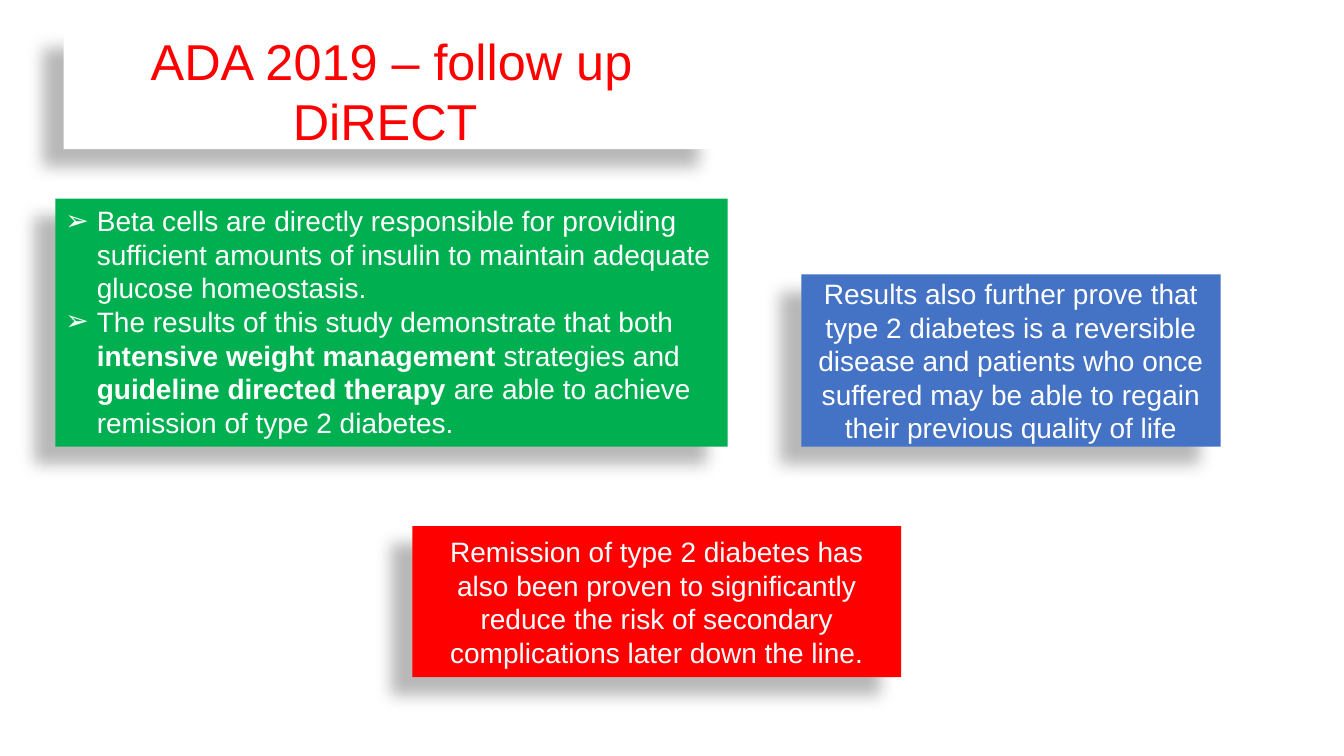
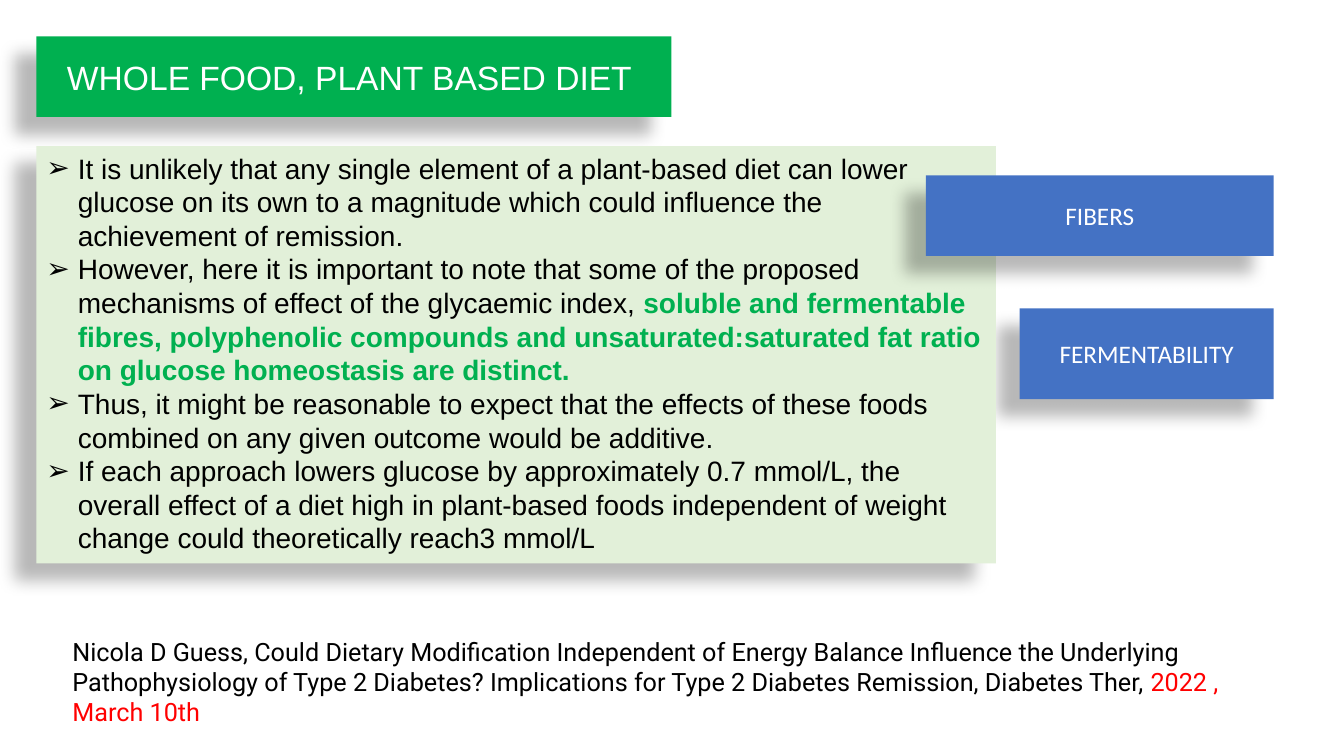
from dataclasses import dataclass

from lxml import etree
from pptx import Presentation
from pptx import util as u
from pptx.dml.color import RGBColor
from pptx.enum import shapes, text
from pptx.oxml.ns import qn


@dataclass(frozen=True)
class Theme:
    """Colours, fonts, type sizes and shadow shared by the slides."""
    white: str = "FFFFFF"
    black: str = "000000"
    red: str = "FF0000"
    green: str = "00B050"
    pale: str = "E2F0D9"
    blue: str = "4472C4"
    body_font: str = "Arial"
    tag_font: str = "Calibri"
    cite_font: str = "Roboto"
    title: int = 36
    heading: int = 24
    body: int = 20
    small: int = 18
    indent: float = 22.5
    shadow_blur: float = 11.8
    shadow_dist: float = 19.7
    shadow_angle: int = 141
    shadow_alpha: int = 28


T = Theme()


def points(box):
    """Turn the numbers of a box into lengths."""
    return [u.Pt(v) for v in box]


def sub(parent, tag, **attrs):
    """Add an XML child with the given attributes."""
    el = etree.SubElement(parent, qn(tag))
    for name, value in attrs.items():
        el.set(name, str(value))
    return el


def cast_shadow(sp):
    """Give a shape the soft shadow down and to the left."""
    sp.shadow.inherit = False
    effects = sp._element.spPr.find(qn("a:effectLst"))
    outer = sub(effects, "a:outerShdw", blurRad=int(u.Pt(T.shadow_blur)),
                dist=int(u.Pt(T.shadow_dist)), dir=T.shadow_angle * 60000,
                rotWithShape=0)
    clr = sub(outer, "a:srgbClr", val=T.black)
    sub(clr, "a:alpha", val=T.shadow_alpha * 1000)


def set_bullet(p):
    """Give a paragraph a hanging arrow bullet."""
    pPr = p._p.get_or_add_pPr()
    indent = int(u.Pt(T.indent))
    pPr.set("marL", str(indent))
    pPr.set("indent", str(-indent))
    sub(pPr, "a:buFont", typeface=T.body_font)
    sub(pPr, "a:buChar", char="➢")


def write(sp, paras, size, color, font=T.body_font, bullets=False, centre=True):
    """Fill a shape with paragraphs, each a list of (text, overrides) runs."""
    tf = sp.text_frame
    fit = text.MSO_AUTO_SIZE.NONE if centre else text.MSO_AUTO_SIZE.SHAPE_TO_FIT_TEXT
    anchor = text.MSO_ANCHOR.MIDDLE if centre else text.MSO_ANCHOR.TOP
    for name, value in dict(word_wrap=True, auto_size=fit, vertical_anchor=anchor).items():
        setattr(tf, name, value)
    for i, runs in enumerate(paras):
        p = tf.add_paragraph() if i else tf.paragraphs[0]
        p.alignment = text.PP_ALIGN.CENTER if centre else text.PP_ALIGN.LEFT
        if bullets:
            set_bullet(p)
        for words, extra in runs:
            r = p.add_run()
            r.text = words
            fmt = dict(name=font, size=u.Pt(size), bold=False, color=color) | extra
            r.font.color.rgb = RGBColor.from_string(fmt.pop("color"))
            for name, value in fmt.items():
                setattr(r.font, name, value)


def panel(s, box, fill, paras, size=T.body, color=T.white, **style):
    """Draw a shadowed rectangle with text."""
    sp = s.shapes.add_shape(shapes.MSO_SHAPE.RECTANGLE, *points(box))
    sp.fill.solid()
    sp.fill.fore_color.rgb = RGBColor.from_string(fill)
    sp.line.fill.background()
    cast_shadow(sp)
    write(sp, paras, size, color, **style)


def bullet_panel(s, box, fill, paras, color):
    """Draw a panel of left-aligned bullets."""
    panel(s, box, fill, paras, color=color, bullets=True, centre=False)


def citation(s, box, runs):
    """Place the source reference."""
    sp = s.shapes.add_textbox(*points(box))
    write(sp, [runs], T.small, T.black, font=T.cite_font, centre=False)


def tag(s, right, y, w, h, words):
    """Draw a blue label that ends at the given right edge."""
    panel(s, (right - w, y, w, h), T.blue, [[(words, {})]], T.small, font=T.tag_font)


def follow_up_slide(s, box):
    """Build the study follow-up slide."""
    x, y, w, h = box
    bold = dict(bold=True)
    base = y + 319
    panel(s, (x + 45.4, y + 22.3, 468.7, 84.2), T.white,
          [[("ADA 2019 – follow up DiRECT ", {})]], T.title, T.red)
    bullet_panel(s, (x + 39.6, base - 177.1, 480.2, 177.1), T.green, [
        [("Beta cells are directly responsible for providing sufficient amounts of "
          "insulin to maintain adequate glucose homeostasis.", {})],
        [("The results of this study demonstrate that both ", {}),
         ("intensive weight management", bold),
         (" strategies and ", {}),
         ("guideline directed therapy ", bold),
         ("are able to achieve remission of type 2 diabetes.", {})],
    ], T.white)
    panel(s, (x + 572.4, base - 123.1, 299.5, 123.1), T.blue, [[(
        "Results also further prove that type 2 diabetes is a reversible disease and "
        "patients who once suffered may be able to regain their previous quality of "
        "life", {})]])
    panel(s, (x + 294.5, y + 375.8, 349.2, 108), T.red, [[(
        "Remission of type 2 diabetes has also been proven to significantly reduce "
        "the risk of secondary complications later down the line.", {})]])


def diet_slide(s, box):
    """Build the plant-based diet slide."""
    x, y, w, h = box
    left, right = x + 26, x + w - 50.2
    citation(s, (x + 44.6, y + 450.7, 882, 72.7), [
        ("Nicola D Guess, Could Dietary Modification Independent of Energy Balance "
         "Influence the Underlying Pathophysiology of Type 2 Diabetes? Implications "
         "for Type 2 Diabetes Remission, Diabetes Ther, ", {}),
        ("2022 , March 10th", dict(color=T.red)),
    ])
    panel(s, (left, y + 26, 453.6, 57.6), T.green,
          [[("WHOLE FOOD, PLANT BASED DIET ", {})]], T.heading)
    tag(s, right, y + 220.3, 181.4, 64.8, "FERMENTABILITY")
    bullet_panel(s, (left, y + 104.4, 685.4, 298.1), T.pale, [
        [("It is unlikely that any single element of a plant-based diet can lower "
          "glucose on its own to a magnitude which could influence the achievement "
          "of remission.", {})],
        [("However, here it is important to note that some of the proposed mechanisms "
          "of effect of the glycaemic index, ", {}),
         ("soluble and fermentable fibres, polyphenolic compounds and "
          "unsaturated:saturated fat ratio on glucose homeostasis are distinct.",
          dict(bold=True, color=T.green))],
        [("Thus, it might be reasonable to expect that the effects of these foods "
          "combined on any given outcome would be additive.", {})],
        [("If each approach lowers glucose by approximately 0.7 mmol/L, the overall "
          "effect of a diet high in plant-based foods independent of weight change "
          "could theoretically reach3 mmol/L", {})],
    ], T.black)
    tag(s, right, y + 125.3, 248.4, 57.6, "FIBERS")


def main():
    """Build and save the presentation."""
    prs = Presentation()
    page = (0, 0, 960, 540)
    prs.slide_width, prs.slide_height = points(page[2:])
    for build in (follow_up_slide, diet_slide):
        build(prs.slides.add_slide(prs.slide_layouts[6]), page)
    prs.save("out.pptx")


if __name__ == "__main__":
    main()
